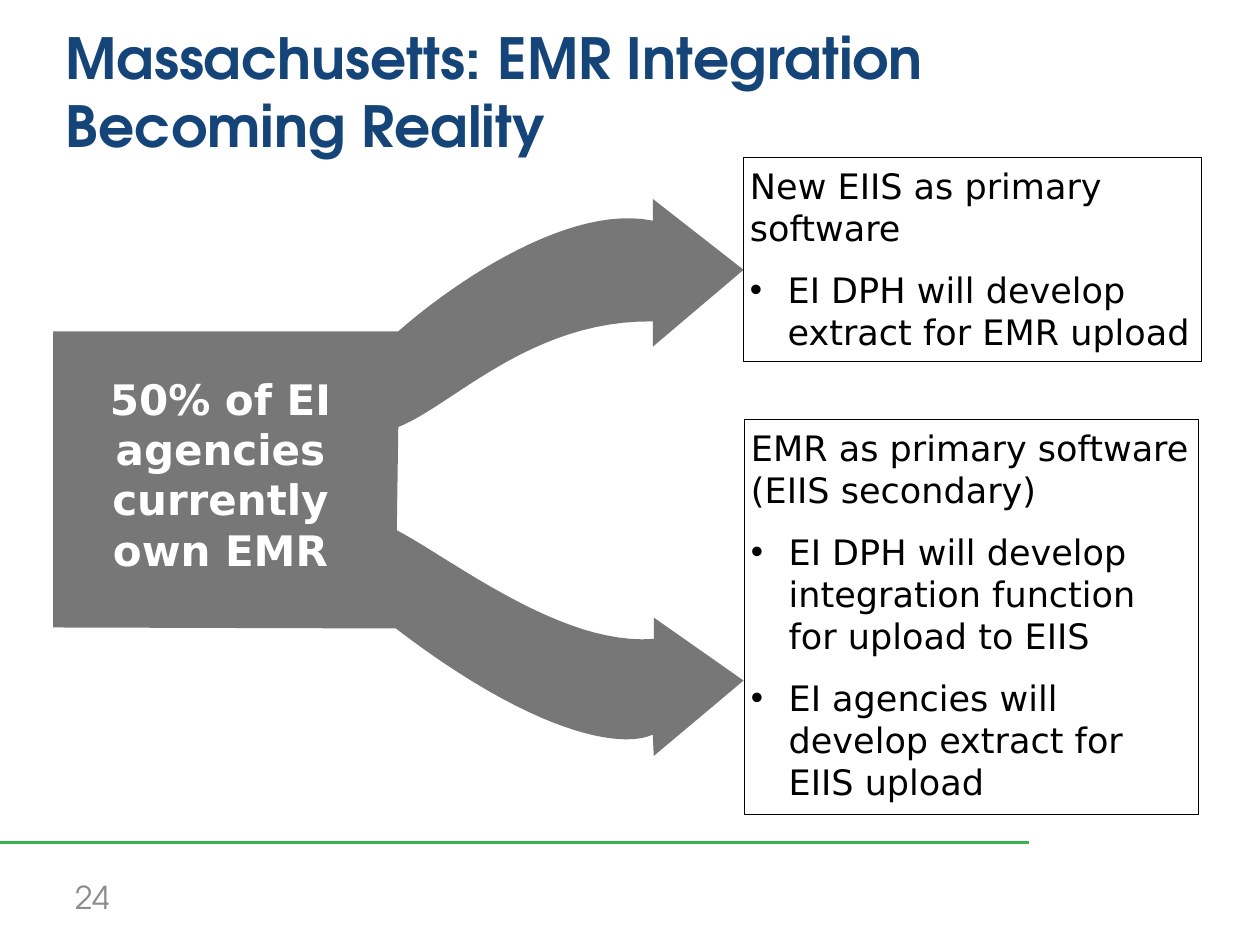
from lxml import etree
from pptx import Presentation
from pptx.dml.color import RGBColor
from pptx.enum import shapes, text
from pptx.oxml import ns
from pptx.util import Cm, Pt

NAVY = RGBColor(0x15, 0x45, 0x78)
GREEN = RGBColor(0x39, 0xB5, 0x4A)
GRAY = RGBColor(0x77, 0x77, 0x77)
LIGHT_GRAY = RGBColor(0x8C, 0x8C, 0x8C)
BLACK = RGBColor(0, 0, 0)
WHITE = RGBColor(0xFF, 0xFF, 0xFF)

# Content
TITLE = "Massachusetts: EMR Integration Becoming Reality"
PAGE = "24"
SHARE = "50% of EI agencies currently own EMR"
OPTIONS = [
    {"at": (14.99, 3.18, 9.22, 4.11),
     "heading": "New EIIS as primary software",
     "points": ["EI DPH will develop extract for EMR upload"]},
    {"at": (15.01, 8.46, 9.14, 7.95),
     "heading": "EMR as primary software (EIIS secondary)",
     "points": ["EI DPH will develop integration function for upload to EIIS",
                "EI agencies will develop extract for EIIS upload"]},
]

# Forked arrow in cm: one point is a straight side, three are a Bézier curve
FORK_START = (1.07, 12.65)
FORK = [
    [(1.07, 6.68)], [(8.03, 6.68)],
    [(9.25, 5.61), (11.53, 4.11), (13.16, 4.45)],
    [(13.16, 4.01)], [(14.99, 5.44)], [(13.16, 6.99)], [(13.16, 6.48)],
    [(10.69, 6.45), (9.12, 8.18), (8.03, 8.61)],
    [(8.0, 10.69)],
    [(9.12, 11.28), (11.33, 13.03), (13.18, 12.88)],
    [(13.18, 12.45)], [(14.99, 13.72)], [(13.18, 15.24)], [(13.16, 14.81)],
    [(12.5, 15.11), (10.74, 14.78), (7.98, 12.67)],
]
CURVE_STEPS = 24

# Formats
TITLE_FONT = {"name": "TeX Gyre Adventor", "size": Pt(32.4), "bold": True}
PAGE_FONT = {"name": "TeX Gyre Adventor", "size": Pt(18)}
SHARE_FONT = {"name": "DejaVu Sans", "size": Pt(24), "bold": True}
OPTION_FONT = {"name": "DejaVu Sans", "size": Pt(20)}
MIDDLE = {"word_wrap": True, "auto_size": text.MSO_AUTO_SIZE.NONE,
          "vertical_anchor": text.MSO_ANCHOR.MIDDLE}
GROWING = {"word_wrap": True, "auto_size": text.MSO_AUTO_SIZE.SHAPE_TO_FIT_TEXT,
           "vertical_anchor": text.MSO_ANCHOR.TOP,
           "margin_left": Cm(0.13), "margin_right": Cm(0.13),
           "margin_top": Cm(0.13), "margin_bottom": Cm(0.13)}


def apply(target, values):
    for key, value in values.items():
        setattr(target, key, value)


def box(*lengths):
    return [Cm(length) for length in lengths]


def write(paragraph, words, font, color, align=text.PP_ALIGN.LEFT):
    paragraph.alignment = align
    run = paragraph.add_run()
    run.text = words
    apply(run.font, font)
    run.font.color.rgb = color


def add_bullet(paragraph):
    props = paragraph._p.get_or_add_pPr()
    props.set("marL", str(Cm(0.76)))
    props.set("indent", str(-Cm(0.76)))
    color = etree.SubElement(props, ns.qn("a:buClr"))
    etree.SubElement(color, ns.qn("a:srgbClr"), val=str(BLACK))
    etree.SubElement(props, ns.qn("a:buFont"), typeface="Arial")
    etree.SubElement(props, ns.qn("a:buChar"), char="•")


def curve(start, *controls):
    points = (start, *controls)
    for step in range(1, CURVE_STEPS + 1):
        t = step / CURVE_STEPS
        weights = ((1 - t) ** 3, 3 * t * (1 - t) ** 2, 3 * t * t * (1 - t), t ** 3)
        yield tuple(sum(w * p[axis] for w, p in zip(weights, points))
                    for axis in (0, 1))


def main():
    prs = Presentation()
    prs.slide_width, prs.slide_height = box(25.4, 19.05)
    slide = prs.slides.add_slide(prs.slide_layouts[5])

    # Footer rule and page number
    rule = slide.shapes.add_connector(
        shapes.MSO_CONNECTOR.STRAIGHT, *box(0, 16.99, 20.75, 16.99))
    rule.line.color.rgb = GREEN
    rule.line.width = Pt(1.5)
    etree.SubElement(rule._element.spPr, ns.qn("a:effectLst"))
    page = slide.shapes.add_textbox(*box(1.27, 17.58, 5.92, 1.02)).text_frame
    apply(page, MIDDLE)
    write(page.paragraphs[0], PAGE, PAGE_FONT, LIGHT_GRAY)

    # Title
    title = slide.shapes.title
    apply(title, dict(zip(("left", "top", "width", "height"),
                          box(1.07, 0.25, 22.86, 3.18))))
    apply(title.text_frame, MIDDLE)
    write(title.text_frame.paragraphs[0], TITLE, TITLE_FONT, NAVY)

    # Forked arrow
    outline = [FORK_START]
    for side in FORK:
        outline.extend(side if len(side) == 1 else curve(outline[-1], *side))
    start, *rest = [box(*point) for point in outline]
    builder = slide.shapes.build_freeform(*start)
    builder.add_line_segments(rest, close=True)
    fork = builder.convert_to_shape()
    fork.shadow.inherit = False
    fork.fill.solid()
    fork.fill.fore_color.rgb = GRAY
    fork.line.fill.background()

    # Share of agencies
    share = slide.shapes.add_textbox(*box(1.27, 7.52, 6.35, 4.22)).text_frame
    apply(share, {**GROWING, "margin_top": 0})
    write(share.paragraphs[0], SHARE, SHARE_FONT, WHITE, text.PP_ALIGN.CENTER)

    # Options
    for option in OPTIONS:
        card = slide.shapes.add_shape(
            shapes.MSO_SHAPE.RECTANGLE, *box(*option["at"]))
        card.shadow.inherit = False
        card.fill.background()
        card.line.color.rgb = BLACK
        card.line.width = Pt(0.25)
        frame = card.text_frame
        apply(frame, GROWING)
        for i, words in enumerate([option["heading"], *option["points"]]):
            paragraph = frame.add_paragraph() if i else frame.paragraphs[0]
            paragraph.space_before = Pt(11.5)
            write(paragraph, words, OPTION_FONT, BLACK)
            if i:
                add_bullet(paragraph)

    prs.save("out.pptx")


if __name__ == "__main__":
    main()
